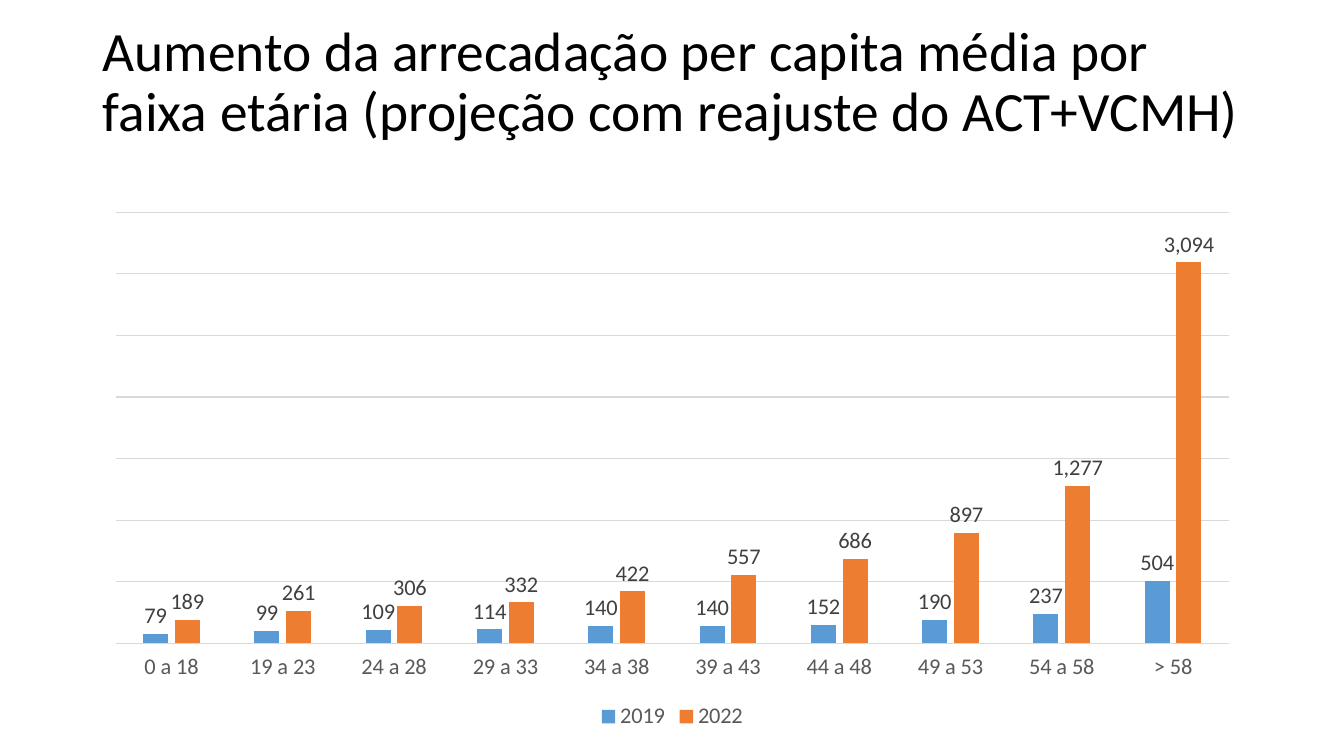
from pptx import Presentation
from pptx.chart.data import CategoryChartData as Data
from pptx.dml.color import RGBColor as RGB
from pptx.enum.chart import XL_CHART_TYPE as Kind
from pptx.enum.chart import XL_LABEL_POSITION as Spot
from pptx.enum.chart import XL_LEGEND_POSITION as Side
from pptx.enum.chart import XL_TICK_LABEL_POSITION as Label
from pptx.enum.chart import XL_TICK_MARK as Tick
from pptx.enum.text import MSO_ANCHOR as Anchor
from pptx.enum.text import MSO_AUTO_SIZE as Fit
from pptx.enum.text import PP_ALIGN as Align
from pptx.util import Inches, Pt

TITLE = ("Aumento da arrecadação per capita média por faixa etária "
         "(projeção com reajuste do ACT+VCMH)")
AGES = ["0 a 18", "19 a 23", "24 a 28", "29 a 33", "34 a 38",
        "39 a 43", "44 a 48", "49 a 53", "54 a 58", "> 58"]
YEARS = {
    "2019": ("5B9BD5", [79, 99, 109, 114, 140, 140, 152, 190, 237, 504]),
    "2022": ("ED7D31", [189, 261, 306, 332, 422, 557, 686, 897, 1277, 3094]),
}
MONEY = '_-* #,##0_-;\\-* #,##0_-;_-* "-"??_-;_-@_'


def paint(target, color):
    target.rgb = RGB.from_string(color)


def style(font, size, color, face="Calibri"):
    font.name, font.size, font.bold = face, Pt(size), False
    paint(font.color, color)


def write(frame, text, size=16, color="000000", align=Align.LEFT, lead=1.0):
    para = frame.paragraphs[0]
    para.alignment, para.line_spacing = align, lead
    run = para.add_run()
    run.text = text
    style(run.font, size, color)


class Deck:
    ink, soft, dark, rule = "000000", "595959", "404040", "D9D9D9"
    size = 16

    def __init__(self):
        self.prs = Presentation()
        self.prs.slide_width = Inches(13.33)
        self.prs.slide_height = Inches(7.5)
        self.slide = self.prs.slides.add_slide(self.prs.slide_layouts[5])

    def box(self, left, top, width, height):
        """Turn percentages of the slide into lengths."""
        wide, high = self.prs.slide_width, self.prs.slide_height
        return [int(share * full / 100) for share, full in
                ((left, wide), (top, high), (width, wide), (height, high))]

    def title(self, text, *area):
        shape = self.slide.shapes.title
        shape.left, shape.top, shape.width, shape.height = self.box(*area)
        frame = shape.text_frame
        frame.word_wrap, frame.auto_size = True, Fit.NONE
        frame.vertical_anchor = Anchor.MIDDLE
        frame.margin_bottom = Inches(0.65)  # lifts the text in its box
        write(frame, text, size=39.6, color=self.ink, lead=0.9)

    def line(self, form):
        paint(form.line.color, self.rule)
        form.line.width = Pt(0.75)

    def axes(self, chart):
        ages, money = chart.category_axis, chart.value_axis
        ages.major_tick_mark = ages.minor_tick_mark = Tick.NONE
        ages.tick_label_position = Label.LOW
        style(ages.tick_labels.font, self.size, self.soft)
        self.line(ages.format)
        money.visible = False
        money.minimum_scale, money.maximum_scale = 0, 3500
        money.major_unit = 500
        money.has_major_gridlines = True
        self.line(money.major_gridlines.format)

    def bars(self, cats, rows, *area):
        data = Data(number_format=MONEY)
        data.categories = cats
        for name, (_, vals) in rows.items():
            data.add_series(name, vals)
        chart = self.slide.shapes.add_chart(
            Kind.COLUMN_CLUSTERED, *self.box(*area), data).chart
        style(chart.font, self.size, self.ink)
        chart.has_title = False
        self.axes(chart)
        chart.has_legend = True
        chart.legend.position = Side.BOTTOM
        chart.legend.include_in_layout = False
        style(chart.legend.font, self.size, self.soft)
        plot = chart.plots[0]
        plot.gap_width, plot.overlap = 219, -27
        plot.vary_by_categories = False
        for bar, (color, _) in zip(plot.series, rows.values()):
            bar.format.fill.solid()
            paint(bar.format.fill.fore_color, color)
            tags = bar.data_labels
            tags.show_value, tags.position = True, Spot.OUTSIDE_END
            tags.number_format, tags.number_format_is_linked = MONEY, False
            style(tags.font, self.size, self.dark)


def main():
    deck = Deck()
    deck.title(TITLE, 6.9, 5.33, 86.25, 19.33)
    deck.bars(AGES, YEARS, 6.9, 26.67, 86.25, 70.53)
    deck.prs.save("out.pptx")


if __name__ == "__main__":
    main()
